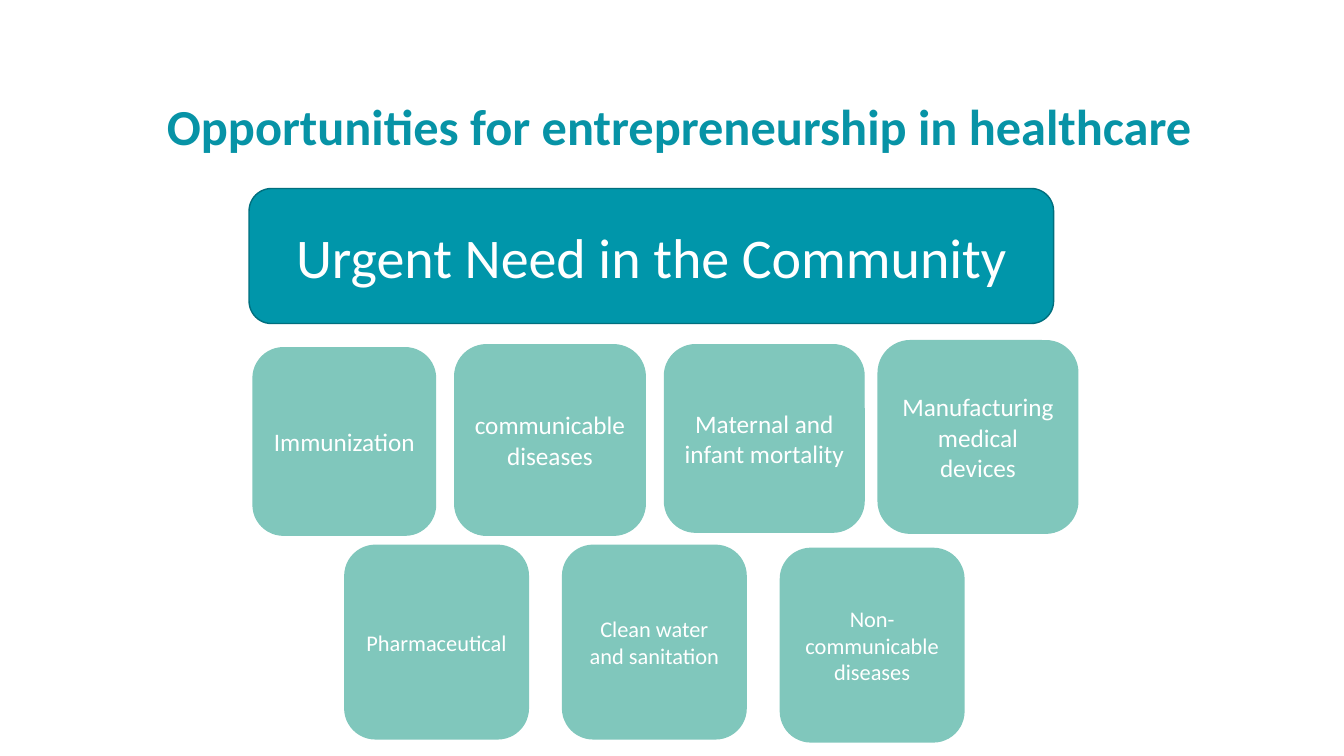
import pptx
import pptx.util
import pptx.dml.color
import pptx.enum.shapes
import pptx.enum.text

Inches = pptx.util.Inches
Pt = pptx.util.Pt

HUES = {
    "title": "0793A6",
    "banner": "0096AA",
    "edge": "006F7E",
    "card": "80C7BC",
    "white": "FFFFFF",
}

# Upper cards: text, left, top, width, height
UPPER = [
    ("Immunization", 2.51, 3.45, 1.81, 1.86),
    ("communicable diseases", 4.51, 3.42, 1.89, 1.89),
    ("Maternal and infant mortality", 6.59, 3.42, 1.98, 1.86),
    ("Manufacturing medical devices", 8.71, 3.38, 1.98, 1.91),
]

# Lower cards: text, top; equal size and pitch
LOWER = [
    ("Pharmaceutical", 5.41),
    ("Clean water and sanitation", 5.41),
    ("Non-communicable diseases", 5.44),
]


def color(name):
    return pptx.dml.color.RGBColor.from_string(HUES[name])


def write(frame, text, size=18, hue="white", bold=False, space=None):
    frame.word_wrap = True
    para = frame.paragraphs[0]
    para.alignment = pptx.enum.text.PP_ALIGN.CENTER
    if space:
        para.line_spacing = space
    run = para.add_run()
    run.text = text
    font = run.font
    font.name = "Calibri"
    font.size = Pt(size)
    font.bold = bold
    font.color.rgb = color(hue)


def add_title(slide, text):
    box = slide.shapes.add_textbox(
        Inches(0.78), Inches(0.95), Inches(11.92), Inches(0.67))
    frame = box.text_frame
    frame.margin_left = frame.margin_right = Inches(0.06)
    frame.margin_top = frame.margin_bottom = Inches(0.06)
    write(frame, text, size=36, hue="title", bold=True, space=0.9)


def add_card(slide, text, left, top, width, height,
             size=18, fill="card", edge="card"):
    card = slide.shapes.add_shape(
        pptx.enum.shapes.MSO_SHAPE.ROUNDED_RECTANGLE,
        Inches(left), Inches(top), Inches(width), Inches(height))
    card.shadow.inherit = False
    card.fill.solid()
    card.fill.fore_color.rgb = color(fill)
    card.line.color.rgb = color(edge)
    card.line.width = Pt(1)
    card.text_frame.vertical_anchor = pptx.enum.text.MSO_ANCHOR.MIDDLE
    write(card.text_frame, text, size=size)


def main():
    deck = pptx.Presentation()
    deck.slide_width = Inches(13.33)
    deck.slide_height = Inches(7.5)
    slide = deck.slides.add_slide(deck.slide_layouts[6])

    # Heading and banner
    add_title(slide, "Opportunities for entrepreneurship in healthcare")
    add_card(slide, "Urgent Need in the Community", 2.47, 1.87, 7.98, 1.34,
             size=40, fill="banner", edge="edge")

    # Two rows of needs
    for text, left, top, width, height in UPPER:
        add_card(slide, text, left, top, width, height)
    for index, (text, top) in enumerate(LOWER):
        add_card(slide, text, 3.42 + 2.16 * index, top, 1.82, 1.92, size=16)

    deck.save("out.pptx")


if __name__ == "__main__":
    main()
